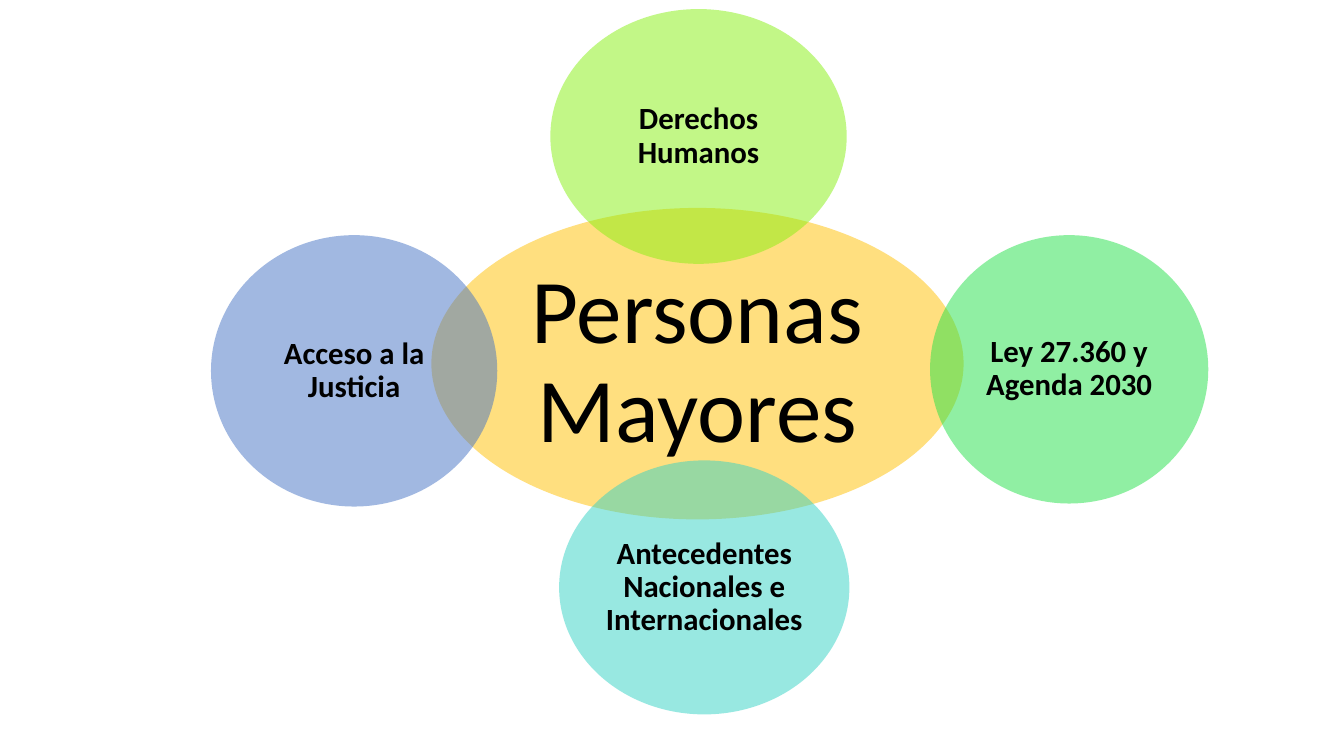
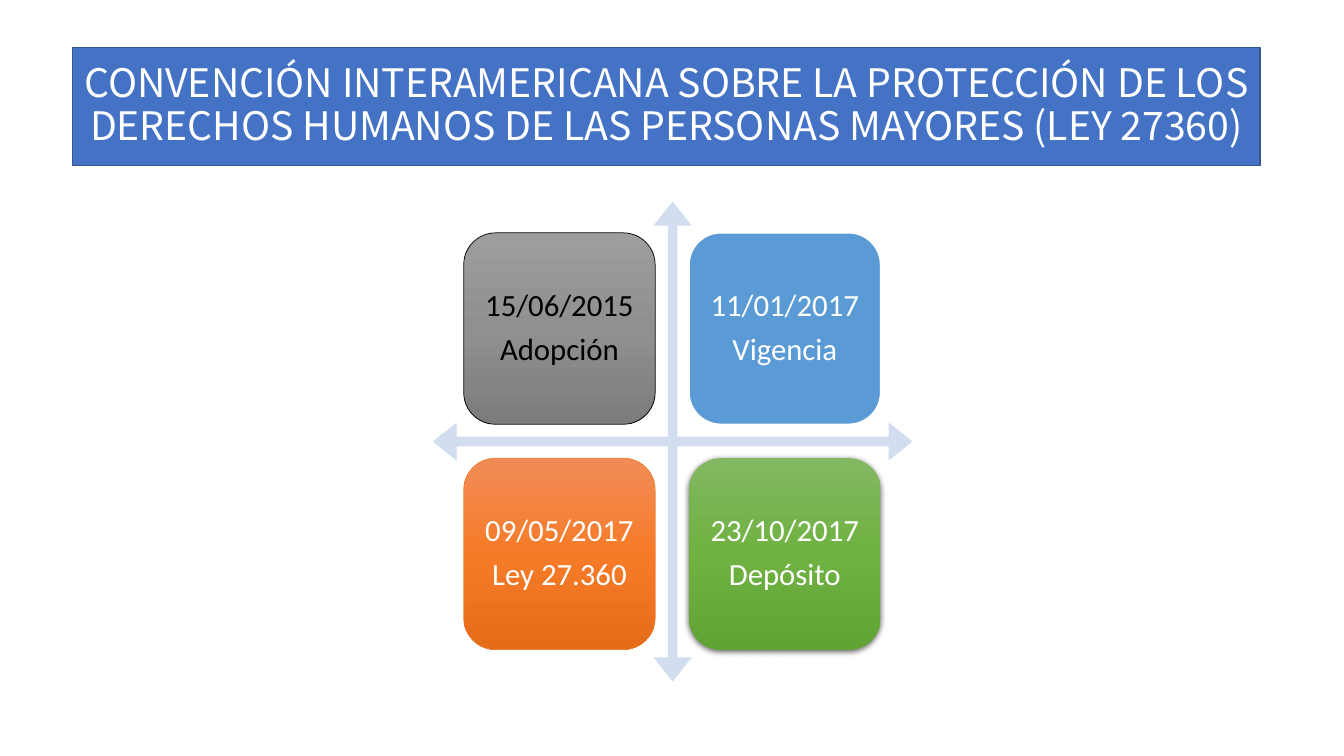
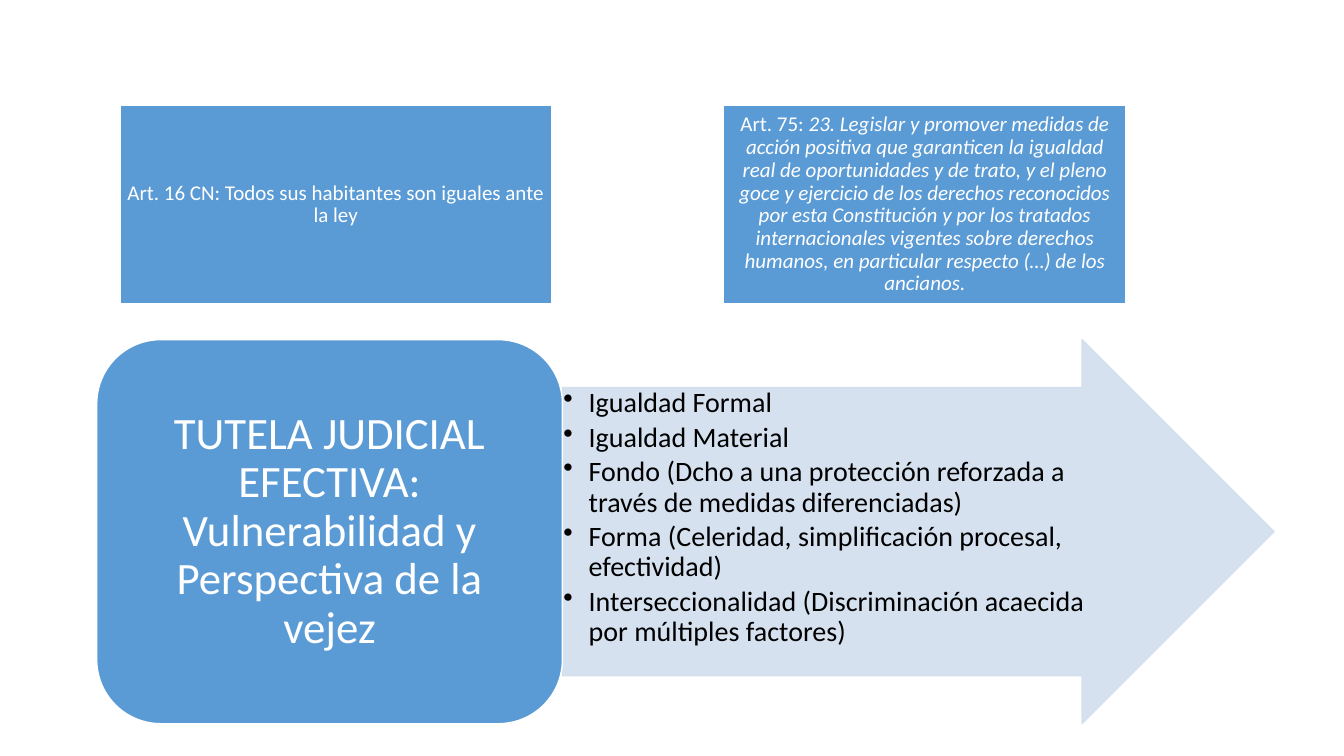
import copy

import lxml.etree
import pptx
import pptx.dml.color
import pptx.enum.shapes
import pptx.enum.text
import pptx.oxml.ns
import pptx.util

SHAPES = pptx.enum.shapes.MSO_SHAPE
ALIGN = pptx.enum.text.PP_ALIGN
ANCHOR = pptx.enum.text.MSO_ANCHOR
COLORS = {
    "black": "000000", "white": "FFFFFF", "blue": "4472C4", "navy": "325491",
    "sky": "5B9BD5", "pale": "D2DEEF", "gold": "FFC000", "lime": "86F011",
    "green": "23E148", "teal": "33D2C5", "orange": "ED7D31",
}
GRADIENTS = {
    "grey": ("9D9D9D", "909090", "7C7C7C"),
    "orange": ("F18C57", "F67B28", "E56C19"),
    "green": ("81B861", "6FB242", "62A336"),
}


class Slides:
    """Holds the deck, its style and the current page; places are percent shares of the page."""

    def __init__(self):
        self.deck = pptx.Presentation()
        self.deck.slide_width = pptx.util.Inches(13.33)
        self.deck.slide_height = pptx.util.Inches(7.5)
        self.page = None

    def new_page(self):
        self.page = self.deck.slides.add_slide(self.deck.slide_layouts[6])

    def color(self, name):
        return pptx.dml.color.RGBColor.from_string(COLORS[name])

    def child(self, parent, tag, **attributes):
        name = pptx.oxml.ns.qn("a:" + tag)
        return lxml.etree.SubElement(parent, name, attributes)

    def shape(self, kind, place, fill, line=None, weight=1, opacity=100, adjust=()):
        width, height = self.deck.slide_width, self.deck.slide_height
        left, top, wide, high = place
        box = self.page.shapes.add_shape(
            kind, int(width * left / 100), int(height * top / 100),
            int(width * wide / 100), int(height * high / 100))
        box.shadow.inherit = False
        for index, value in enumerate(adjust):
            box.adjustments[index] = value
        box.fill.solid()
        box.fill.fore_color.rgb = self.color(fill)
        if line:
            box.line.color.rgb = self.color(line)
            box.line.width = pptx.util.Pt(weight)
        else:
            box.line.fill.background()
        if opacity < 100:
            for node in box._element.spPr.findall(".//" + pptx.oxml.ns.qn("a:srgbClr")):
                self.child(node, "alpha", val=str(opacity * 1000))
        return box

    def gradient(self, box, name):
        box.fill.gradient()
        box.fill.gradient_angle = 270
        stops = box._element.spPr.find(".//" + pptx.oxml.ns.qn("a:gsLst"))
        stops.append(copy.deepcopy(stops[0]))
        for index, stop in enumerate(box.fill.gradient_stops):
            stop.position = index / 2
            stop.color.rgb = pptx.dml.color.RGBColor.from_string(GRADIENTS[name][index])

    def shadow(self, box):
        effects = box._element.spPr.find(pptx.oxml.ns.qn("a:effectLst"))
        outer = self.child(effects, "outerShdw", blurRad="57150", dist="19050",
                           dir="5400000", algn="ctr", rotWithShape="0")
        self.child(self.child(outer, "srgbClr", val=COLORS["black"]), "alpha", val="63000")

    def label(self, box, text, size, color="white", bold=False, font="Calibri",
              inset=(6.5, 6.5), after=0.35, italic_tail="", bullets=False):
        frame = box.text_frame
        frame.word_wrap = True
        frame.margin_left = frame.margin_right = pptx.util.Pt(inset[0])
        frame.margin_top = frame.margin_bottom = pptx.util.Pt(inset[1])
        frame.vertical_anchor = ANCHOR.TOP if bullets else ANCHOR.MIDDLE
        frame.text = text
        if italic_tail:
            tail = frame.paragraphs[-1].add_run()
            tail.text = italic_tail
            tail.font.italic = True
        for para in frame.paragraphs:
            para.alignment = ALIGN.LEFT if bullets else ALIGN.CENTER
            para.line_spacing = 0.9
            para.space_after = pptx.util.Pt(size * after)
            if bullets:
                self.bullet(para)
            for span in para.runs:
                span.font.name = font
                span.font.size = pptx.util.Pt(size)
                span.font.bold = bold
                span.font.color.rgb = self.color(color)

    def bullet(self, para):
        props = para._p.get_or_add_pPr()
        indent = pptx.util.Inches(0.25)
        props.set("marL", str(int(indent)))
        props.set("indent", str(-int(indent)))
        self.child(props, "buChar", char="•")

    def bubble(self, place, fill, text, size=22, bold=True, inset=(2, 2)):
        box = self.shape(SHAPES.OVAL, place, fill, opacity=50)
        self.label(box, text, size, "black", bold, inset=inset)

    def title(self, text):
        box = self.shape(SHAPES.RECTANGLE, (5.4, 6.27, 88.35, 15.6), "blue", "navy")
        self.label(box, text, 28, font="Noto Sans CJK SC", inset=(7.2, 3.6), after=0)

    def article(self, left, width, text, italic_tail=""):
        box = self.shape(SHAPES.RECTANGLE, (left, 14, width, 26.13), "sky", "white")
        self.label(box, text, 15, inset=(4.5, 4.5), italic_tail=italic_tail)


def topics(slides):
    slides.new_page()
    slides.bubble((32.1, 27.5, 39.6, 41.2), "gold", "Personas Mayores", 65, False, (6.5, 6.5))
    for place, fill, text in (
        ((40.95, 1.2, 22.05, 33.7), "lime", "Derechos Humanos"),
        ((69.2, 31.1, 20.7, 35.5), "green", "Ley 27.360 y Agenda 2030"),
        ((41.6, 60.9, 21.6, 33.6), "teal", "Antecedentes Nacionales e Internacionales"),
        ((15.7, 31.1, 21.3, 35.9), "blue", "Acceso a la Justicia"),
    ):
        slides.bubble(place, fill, text)


def convention(slides):
    slides.new_page()
    slides.title("CONVENCIÓN INTERAMERICANA SOBRE LA PROTECCIÓN DE LOS DERECHOS HUMANOS "
                 "DE LAS PERSONAS MAYORES (LEY 27360)")
    slides.shape(SHAPES.QUAD_ARROW, (32.2, 26.67, 35.7, 63.47), "pale",
                 adjust=(0.02, 0.04, 0.05))
    milestones = (
        ("15/06/2015\nAdopción", "black", "grey", "black", 0.5),
        ("11/01/2017\nVigencia", "white", None, "white", 1),
        ("09/05/2017\nLey 27.360", "white", "orange", "orange", 0.5),
        ("23/10/2017\nDepósito", "white", "green", None, 0),
    )
    for index, (text, color, gradient, line, weight) in enumerate(milestones):
        row, column = divmod(index, 2)
        place = (34.5 + 16.77 * column, 30.8 + 29.8 * row, 14.25, 25.33)
        tile = slides.shape(SHAPES.ROUNDED_RECTANGLE, place, "sky", line, weight)
        if gradient:
            slides.gradient(tile, gradient)
        if not line:
            slides.shadow(tile)
        slides.label(tile, text, 22, color)


def protection(slides):
    slides.new_page()
    arrow = slides.shape(SHAPES.RIGHT_ARROW, (41.85, 44.93, 52.95, 50.8), "pale", "pale",
                         opacity=90, adjust=(0.75, 0.5))
    slides.label(arrow, "\n".join((
        "Igualdad Formal",
        "Igualdad Material",
        "Fondo (Dcho a una protección reforzada a través de medidas diferenciadas)",
        "Forma (Celeridad, simplificación procesal, efectividad)",
        "Interseccionalidad (Discriminación acaecida por múltiples factores)",
    )), 20, "black", inset=(0.75, 0.75), after=0.15, bullets=True)
    card = slides.shape(SHAPES.ROUNDED_RECTANGLE, (7.2, 44.93, 34.65, 50.8), "sky", "white")
    slides.label(card, "TUTELA JUDICIAL EFECTIVA: Vulnerabilidad y Perspectiva de la vejez",
                 32, inset=(9.6, 4.8))
    slides.article(8.93, 32.1, "Art. 16 CN: Todos sus habitantes son iguales ante la ley")
    slides.article(53.85, 29.93, "Art. 75: ",
                   "23. Legislar y promover medidas de acción positiva que garanticen la "
                   "igualdad real de oportunidades y de trato, y el pleno goce y ejercicio de "
                   "los derechos reconocidos por esta Constitución y por los tratados "
                   "internacionales vigentes sobre derechos humanos, en particular respecto "
                   "(…) de los ancianos.")


def main():
    slides = Slides()
    for build in (topics, convention, protection):
        build(slides)
    slides.deck.save("out.pptx")


if __name__ == "__main__":
    main()
